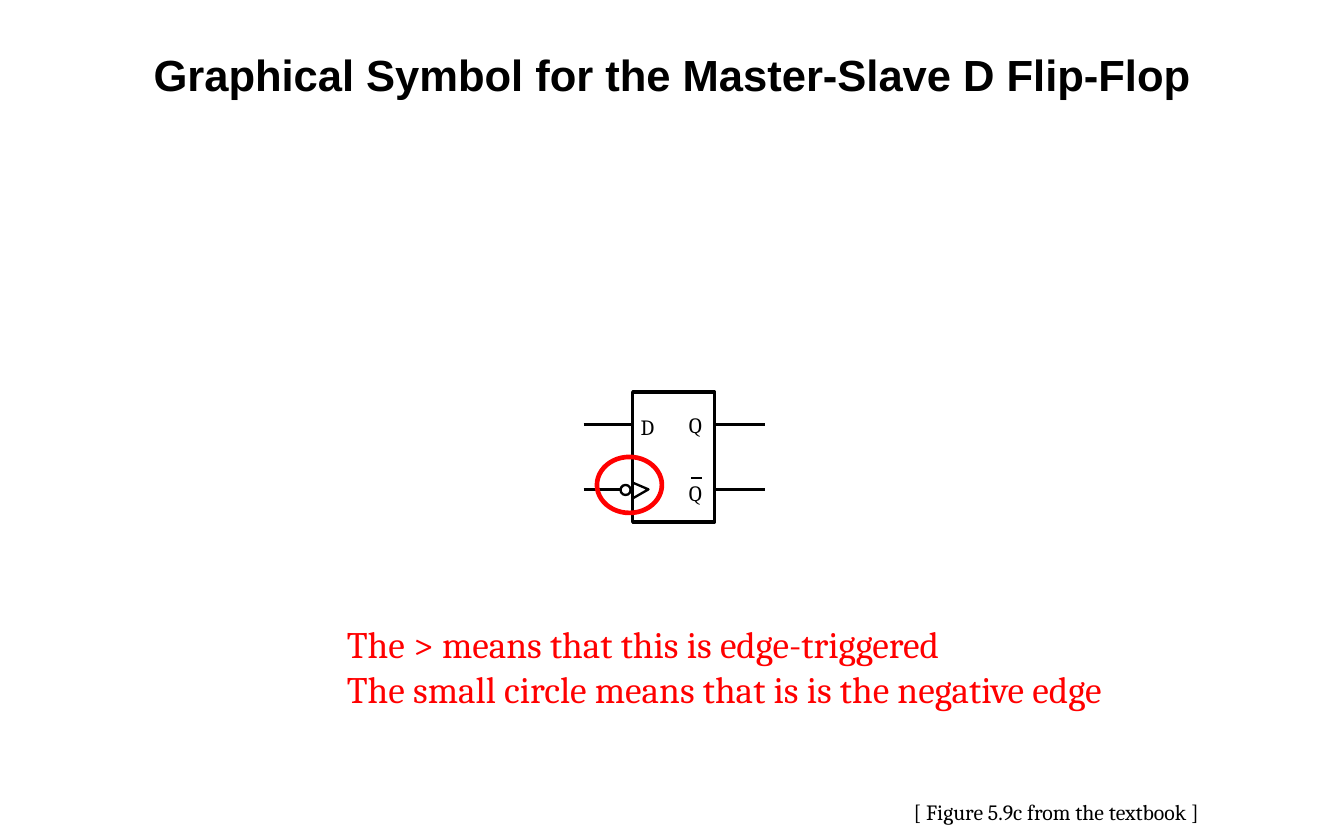
from lxml.etree import SubElement
from pptx import Presentation
from pptx.dml.color import RGBColor
from pptx.enum.shapes import MSO_CONNECTOR, MSO_SHAPE
from pptx.enum.text import MSO_ANCHOR, MSO_AUTO_SIZE, PP_ALIGN
from pptx.oxml.ns import qn
from pptx.util import Inches, Pt

COLORS = {"ink": "000000", "paper": "FFFFFF", "accent": "FF0000"}


def style_outline(shape, color, width, fill=None):
    shape.shadow.inherit = False
    shape.line.color.rgb = RGBColor.from_string(COLORS[color])
    shape.line.width = Pt(width)
    if fill:
        shape.fill.solid()
        shape.fill.fore_color.rgb = RGBColor.from_string(COLORS[fill])
    else:
        shape.fill.background()


def add_text(box, lines, size, color="ink", font="Cambria", inset=None):
    left, top, width, height = (Inches(value) for value in box)
    frame = slide.shapes.add_textbox(left, top, width, height).text_frame
    frame.word_wrap = False
    frame.auto_size = MSO_AUTO_SIZE.SHAPE_TO_FIT_TEXT
    if inset is not None:
        frame.margin_left = frame.margin_right = Inches(inset)
        frame.margin_top = frame.margin_bottom = Inches(inset)
    for index, line in enumerate(lines):
        paragraph = frame.add_paragraph() if index else frame.paragraphs[0]
        run = paragraph.add_run()
        run.text = line
        run.font.size = Pt(size)
        run.font.name = font
        run.font.color.rgb = RGBColor.from_string(COLORS[color])
    return frame


presentation = Presentation()
presentation.slide_width = Inches(12)
presentation.slide_height = Inches(7.5)
slide = presentation.slides.add_slide(presentation.slide_layouts[6])

body = slide.shapes.add_shape(
    MSO_SHAPE.RECTANGLE, Inches(5.65), Inches(3.5), Inches(0.73), Inches(1.16))
style_outline(body, "ink", 2.25, "paper")

for label, left, top in [("D", 5.72, 3.69), ("Q", 6.15, 3.68), ("Q", 6.15, 4.28)]:
    add_text((left, top, 0.19, 0.24), [label], 14, inset=0)

builder = slide.shapes.build_freeform(Inches(5.65), Inches(4.45))
builder.add_line_segments(
    [(Inches(5.79), Inches(4.37)), (Inches(5.65), Inches(4.31))], close=False)
style_outline(builder.convert_to_shape(), "ink", 1.5)

inversion_bubble = slide.shapes.add_shape(
    MSO_SHAPE.OVAL, Inches(5.54), Inches(4.33), Inches(0.09), Inches(0.09))
style_outline(inversion_bubble, "ink", 1.5)

wires = [
    (5.21, 5.65, 3.79, 1.5),
    (5.21, 5.54, 4.37, 1.5),
    (6.38, 6.83, 3.79, 1.5),
    (6.38, 6.83, 4.37, 1.5),
    (6.17, 6.27, 4.27, 1.38),
]
for start, end, height, width in wires:
    wire = slide.shapes.add_connector(
        MSO_CONNECTOR.STRAIGHT, Inches(start), Inches(height), Inches(end), Inches(height))
    wire.line.color.rgb = RGBColor.from_string(COLORS["ink"])
    wire.line.width = Pt(width)
    SubElement(wire._element.spPr, qn("a:effectLst"))

add_text((8.06, 7.08, 2.78, 0.34), ["[ Figure 5.9c from the textbook ]"], 14)

title = add_text((1, 0.33, 10, 0.67),
                 ["Graphical Symbol for the Master-Slave D Flip-Flop"], 28, font="Arial")
title.word_wrap = True
title.auto_size = MSO_AUTO_SIZE.NONE
title.vertical_anchor = MSO_ANCHOR.MIDDLE
title.paragraphs[0].alignment = PP_ALIGN.CENTER
title.paragraphs[0].runs[0].font.bold = True

highlight = slide.shapes.add_shape(
    MSO_SHAPE.OVAL, Inches(5.33), Inches(4.08), Inches(0.58), Inches(0.5))
style_outline(highlight, "accent", 3)

add_text((3, 5.5, 6.96, 0.91),
         ["The > means that this is edge-triggered",
          "The small circle means that is is the negative edge"], 24, "accent")

presentation.save("out.pptx")
